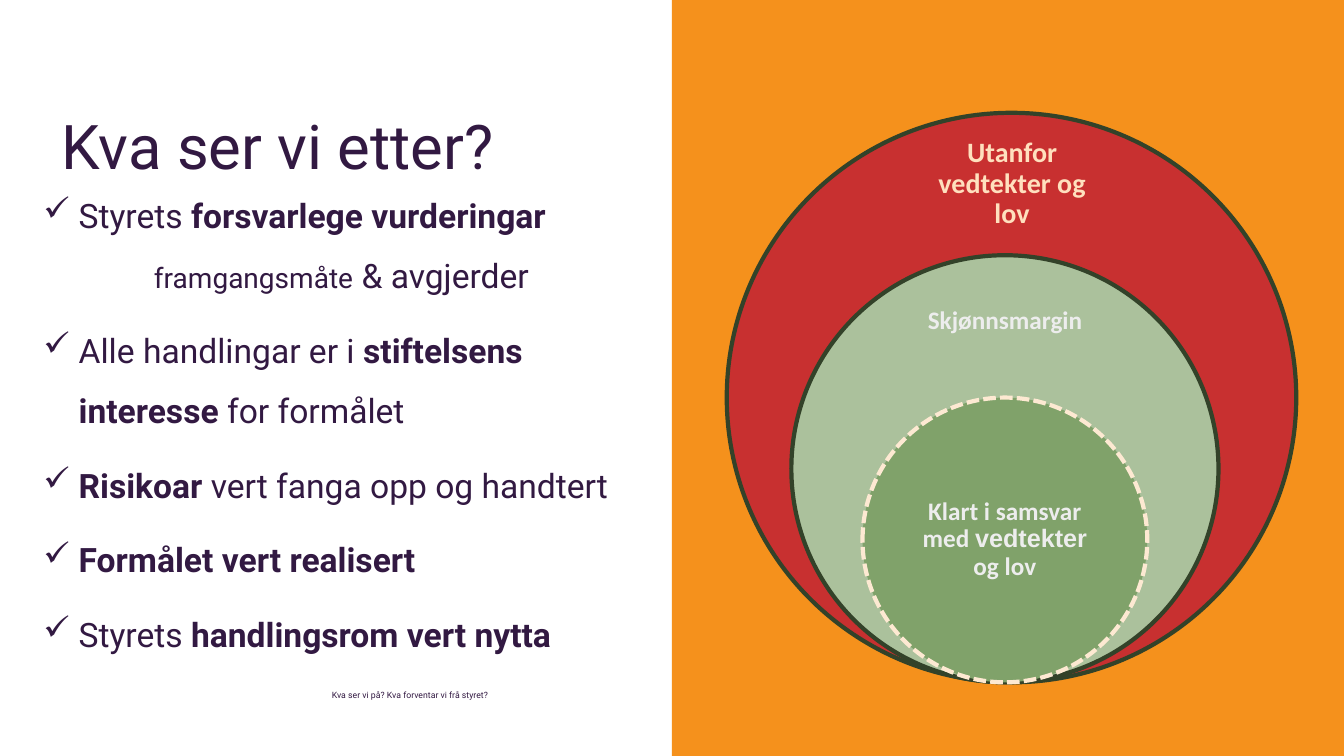
from lxml import etree
from pptx import Presentation
from pptx.dml.color import RGBColor
from pptx.enum.dml import MSO_LINE
from pptx.enum.shapes import MSO_SHAPE
from pptx.enum.text import MSO_ANCHOR, PP_ALIGN
from pptx.oxml.ns import qn
from pptx.util import Pt

RECTANGLE, OVAL = MSO_SHAPE.RECTANGLE, MSO_SHAPE.OVAL
DASH = MSO_LINE.SQUARE_DOT
TOP, MIDDLE = MSO_ANCHOR.TOP, MSO_ANCHOR.MIDDLE
LEFT, CENTER = PP_ALIGN.LEFT, PP_ALIGN.CENTER

PURPLE = RGBColor(0x32, 0x19, 0x42)
ORANGE = RGBColor(0xF5, 0x91, 0x1C)
RED = RGBColor(0xC8, 0x30, 0x30)
LIGHT_GREEN = RGBColor(0xAB, 0xC1, 0x9C)
GREEN = RGBColor(0x80, 0xA2, 0x6A)
DARK_GREEN = RGBColor(0x33, 0x42, 0x29)
CREAM = RGBColor(0xFD, 0xE9, 0xD2)
PEACH = RGBColor(0xFF, 0xE0, 0xBE)
PALE_GREY = RGBColor(0xED, 0xED, 0xED)

WIDTH, HEIGHT = 960, 540
HANGING = 25.2

POINTS = [
    {"runs": [("Styrets ", {}), ("forsvarlege vurderingar", {"bold": True})]},
    {"runs": [("framgangsmåte", {"size": 20}), (" & avgjerder", {})],
     "bullet": None, "margin": 79, "before": 0},
    {"runs": [("Alle handlingar er i ", {}), ("stiftelsens interesse ", {"bold": True}),
              ("for formålet", {})]},
    {"runs": [("Risikoar ", {"bold": True}), ("vert fanga opp og handtert", {})]},
    {"runs": [("Formålet vert realisert", {"bold": True})]},
    {"runs": [("Styrets ", {}), ("handlingsrom vert nytta", {"bold": True})]},
]

CIRCLES = [
    {"scale": 1, "shift": 4.7, "fill": RED, "line": DARK_GREEN, "dash": None,
     "label": (651.6, 100.8, 142.6, 61.2), "inset": 11.5,
     "runs": [("Utanfor vedtekter og lov", {})], "size": 20, "color": PEACH},
    {"scale": 0.75, "shift": 0, "fill": LIGHT_GREEN, "line": DARK_GREEN, "dash": None,
     "label": (646.6, 200.9, 142.6, 56.9), "inset": 10,
     "runs": [("Skjønnsmargin", {})], "size": 18, "color": PALE_GREY},
    {"scale": 0.5, "shift": 0, "fill": GREEN, "line": CREAM, "dash": DASH,
     "label": (645.8, 334.8, 144, 101.5), "inset": 10,
     "runs": [("Klart i samsvar med ", {}), ("vedtekter", {"font": "Arial"}), (" og lov", {})],
     "size": 18, "color": PALE_GREY},
]


def add_run(paragraph, text, font="Roboto", size=24, color=PURPLE, bold=False):
    """Add one formatted run of text to a paragraph."""
    run = paragraph.add_run()
    run.text = text
    run.font.name = font
    run.font.size = Pt(size)
    run.font.color.rgb = color
    run.font.bold = bold


def set_bullet(paragraph, character, margin):
    """Set the left margin of a paragraph and its hanging bullet, if any."""
    properties = paragraph._p.get_or_add_pPr()
    properties.set("marL", str(Pt(margin)))
    properties.set("indent", str(Pt(-HANGING) if character else 0))
    if character:
        etree.SubElement(properties, qn("a:buChar")).set("char", character)


def add_text(slide, box, paragraphs, inset=3.6, anchor=TOP, align=LEFT, spacing=0.9, **style):
    """Add a wrapped text box holding the given paragraphs."""
    shape = slide.shapes.add_textbox(*map(Pt, box))
    frame = shape.text_frame
    frame.word_wrap = True
    frame.vertical_anchor = anchor
    frame.margin_left = frame.margin_right = Pt(inset)
    frame.margin_top = frame.margin_bottom = Pt(inset)
    for index, item in enumerate(paragraphs):
        paragraph = frame.add_paragraph() if index else frame.paragraphs[0]
        if "margin" in item:
            set_bullet(paragraph, item["bullet"], item["margin"])
        paragraph.alignment = align
        paragraph.line_spacing = spacing
        paragraph.space_before = Pt(item.get("before", 0) if index else 0)
        for text, run_style in item["runs"]:
            add_run(paragraph, text, **{**style, **run_style})


def add_filled(slide, kind, box, fill, line=None, dash=None):
    """Add a flat filled shape with an optional outline."""
    shape = slide.shapes.add_shape(kind, *map(Pt, box))
    shape.shadow.inherit = False
    shape.fill.solid()
    shape.fill.fore_color.rgb = fill
    if line is None:
        shape.line.fill.background()
        return
    shape.line.color.rgb = line
    shape.line.width = Pt(3)
    if dash is not None:
        shape.line.dash_style = dash


def add_checklist(slide, left, top, width, height):
    """Place the heading, the ticked points and the small caption."""
    add_text(slide, (left + 16.5, top, 323, 50),
             [{"runs": [("Kva ser vi etter?", {})]}], inset=0, size=44)
    defaults = {"bullet": "✓", "margin": HANGING, "before": 10}
    add_text(slide, (left, top + 38, width, 360),
             [{**defaults, **point} for point in POINTS], spacing=1.5)
    add_text(slide, (left + 206, top + height - 14, 175, 14),
             [{"runs": [("Kva ser vi på? Kva forventar vi frå styret?", {})]}], size=6.2)


def add_nested_circles(slide, left, top, diameter):
    """Place the circles so that they share their lowest point."""
    center, bottom = left + diameter / 2 - CIRCLES[0]["shift"], top + diameter
    for circle in CIRCLES:
        size = diameter * circle["scale"]
        box = (center + circle["shift"] - size / 2, bottom - size, size, size)
        add_filled(slide, OVAL, box, circle["fill"], circle["line"], circle["dash"])
        label_left, label_top, label_width, label_height = circle["label"]
        label = (label_left, label_top, label_width, label_height)
        add_text(slide, label, [{"runs": circle["runs"]}], inset=circle["inset"],
                 anchor=MIDDLE, align=CENTER, font="Calibri", size=circle["size"],
                 color=circle["color"], bold=True)


def main():
    """Build and save the presentation."""
    presentation = Presentation()
    presentation.slide_width, presentation.slide_height = Pt(WIDTH), Pt(HEIGHT)
    slide = presentation.slides.add_slide(presentation.slide_layouts[6])
    add_filled(slide, RECTANGLE, (WIDTH / 2, 0, WIDTH / 2, HEIGHT), ORANGE)
    add_checklist(slide, 27.4, 83, 452, 421)
    add_nested_circles(slide, 519.1, 80.6, 406.8)
    presentation.save("out.pptx")


if __name__ == "__main__":
    main()
